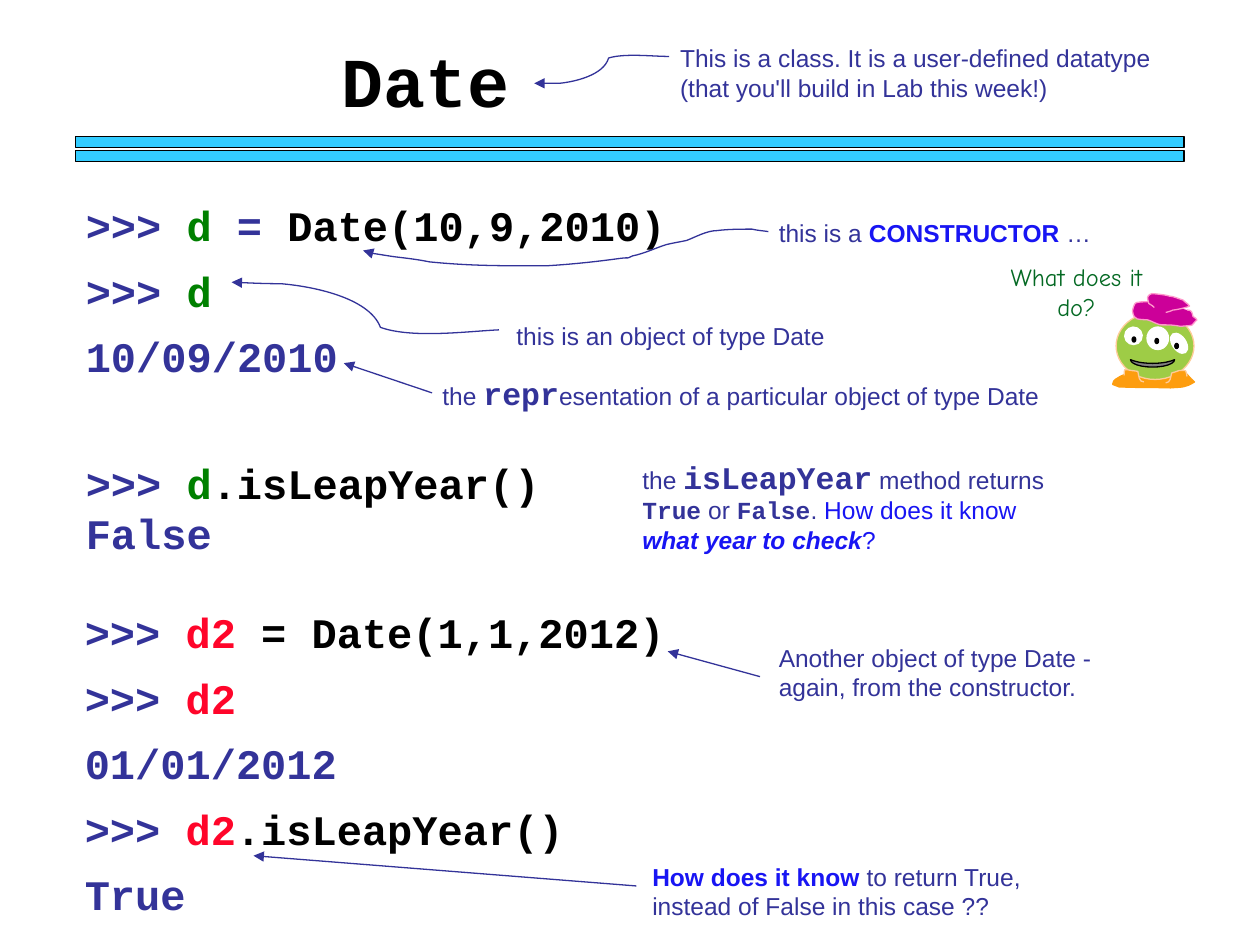
import pptx
import pptx.util
import pptx.dml.color
import pptx.enum.shapes
import pptx.enum.text
import pptx.oxml
import pptx.oxml.ns

Cm, Pt = pptx.util.Cm, pptx.util.Pt
Kind = pptx.enum.shapes.MSO_SHAPE
Align = pptx.enum.text.PP_ALIGN
qn = pptx.oxml.ns.qn

HEX = {"navy": "333399", "blue": "1815F3", "green": "008000", "red": "FF052A",
       "black": "000000", "white": "FFFFFF", "cyan": "33CCFF", "leaf": "046923",
       "lime": "9ECC46", "peach": "FFCC99", "orange": "FD9D0F", "plum": "CC0099",
       "pink": "FF99CC", "gray": "808080"}
HUE = {name: pptx.dml.color.RGBColor.from_string(code) for name, code in HEX.items()}

deck = pptx.Presentation()
deck.slide_width, deck.slide_height = Cm(25.4), Cm(19.05)
slide = deck.slides.add_slide(deck.slide_layouts[6])
shapes = slide.shapes


def write(box, lines, font="Arial", size=14, hue="navy", bold=False, align=Align.LEFT, gaps=()):
    """Add a text box; each line is a list of (text, marks), marks being words for a run."""
    area = shapes.add_textbox(*map(Cm, box))
    frame = area.text_frame
    frame.word_wrap = True
    frame.auto_size = pptx.enum.text.MSO_AUTO_SIZE.SHAPE_TO_FIT_TEXT
    for i, line in enumerate(lines):
        para = frame.paragraphs[0] if i == 0 else frame.add_paragraph()
        para.alignment = align
        if gaps:
            para.line_spacing = gaps[i]
        para.font.name, para.font.size, para.font.bold = font, Pt(size), bold
        para.font.color.rgb = HUE[hue]
        for text, marks in line:
            run = para.add_run()
            run.text = text
            for mark in marks.split():
                if mark in HUE:
                    run.font.color.rgb = HUE[mark]
                elif mark == "mono":
                    run.font.name, run.font.bold = "Courier New", True
                elif mark == "big":
                    run.font.size = Pt(18)
                else:
                    setattr(run.font, mark, True)


def trace(home, start, curves, closed=False):
    """Draw a chain of cubic curves, each given as two handles and an end point."""
    pen = home.build_freeform(Cm(start[0]), Cm(start[1]))
    pen.add_line_segments([(Cm(curve[i]), Cm(curve[i + 1])) for curve in curves for i in (0, 2, 4)],
                          close=closed)
    form = pen.convert_to_shape()
    legs = form._element.findall(".//" + qn("a:lnTo"))
    for first, *others in zip(legs[::3], legs[1::3], legs[2::3]):
        first.tag = qn("a:cubicBezTo")
        for leg in others:
            first.append(leg[0])
            leg.getparent().remove(leg)
    form.shadow.inherit = False
    form.line.width = Pt(0.75)
    return form


# Title and double rule
rule = shapes.add_group_shape().shapes
for top in (2.75, 3.04):
    bar = rule.add_shape(Kind.RECTANGLE, Cm(1.52), Cm(top), Cm(22.35), Cm(0.22))
    bar.shadow.inherit = False
    bar.fill.solid()
    bar.fill.fore_color.rgb = HUE["cyan"]
    bar.line.color.rgb, bar.line.width = HUE["black"], Pt(0.75)
write((2.13, 0.64, 12.9, 1.96), [[("Date", "")]], "Courier New", 40, "black", True, Align.CENTER)

# Interpreter sessions
ask = (">>> ", "")
sessions = [
    ((1.48, 3.6, 22.43, 4.22), (1.3, 1.3, 1.3), [
        [ask, ("d", "green"), (" = ", ""), ("Date(10,9,2010)", "black")],
        [ask, ("d", "green")],
        [("10/09/2010", "")]]),
    ((1.48, 9.1, 19.28, 2.31), (1.0, 1.0), [
        [ask, ("d", "green"), (".isLeapYear()", "black")],
        [("False", "")]]),
    ((1.46, 12.11, 19.28, 6.55), (1.0, 1.3, 1.3, 1.3, 1.3), [
        [ask, ("d2 ", "red"), ("= Date(1,1,2012)", "black")],
        [ask, ("d2", "red")],
        [("01/01/2012", "")],
        [ask, ("d2", "red"), (".isLeapYear()", "black")],
        [("True", "")]]),
]
for box, gaps, lines in sessions:
    write(box, lines, "Courier New", 24, bold=True, gaps=gaps)

# Remarks
remarks = [
    ((13.46, 0.75, 10.16, 1.45), [("This is a class. It is a user-defined datatype "
                                   "(that you'll build in Lab this week!)", "")]),
    ((15.45, 4.27, 7.16, 0.84), [("this is a ", ""), ("CONSTRUCTOR", "blue bold"), (" …", "")]),
    ((10.16, 6.35, 11.3, 0.84), [("this is an object of type Date", "")]),
    ((8.67, 7.42, 12.98, 1.02), [("the ", ""), ("repr", "mono big"),
                                 ("esentation of a particular object of type Date", "")]),
    ((12.7, 9.1, 8.69, 2.21), [("the ", ""), ("isLeapYear", "mono big"), (" method returns ", ""),
                               ("True", "mono"), (" or ", ""), ("False", "mono"), (". ", ""),
                               ("How does it know ", "blue"),
                               ("what year to check", "blue bold italic"), ("?", "blue")]),
    ((15.45, 12.83, 7.7, 1.45), [("Another object of type Date - again, from the constructor.", "")]),
    ((12.9, 17.25, 8.89, 1.45), [("How does it know", "blue bold"),
                                 (" to return True, instead of False in this case ??", "")]),
]
for box, runs in remarks:
    write(box, [runs])

# Arrows from remarks to code
arrows = []
bends = [
    ((13.49, 1.14), [(13.16, 1.14, 12.6, 1.07, 12.27, 1.17), (12.17, 1.52, 11.58, 1.65, 11.28, 1.68),
                     (11.1, 1.68, 10.77, 1.68, 10.77, 1.68)]),
    ((10.06, 6.65), [(9.42, 6.68, 8.31, 6.83, 7.67, 6.6), (7.44, 5.99, 6.27, 5.77, 5.66, 5.72),
                     (5.33, 5.72, 4.67, 5.69, 4.67, 5.69)]),
    ((15.49, 4.67), [(15.37, 4.65, 15.29, 4.65, 15.16, 4.62), (14.94, 4.62, 14.68, 4.62, 14.45, 4.65),
                     (14.25, 4.65, 14.02, 4.78, 13.84, 4.85), (13.69, 4.88, 13.56, 4.9, 13.44, 4.93),
                     (13.21, 5, 13, 5.11, 12.75, 5.16), (12.6, 5.23, 12.73, 5.18, 12.5, 5.21),
                     (11.99, 5.28, 11.51, 5.33, 11, 5.36), (10.06, 5.36, 9.47, 5.36, 8.66, 5.28),
                     (8.41, 5.23, 8.23, 5.21, 7.98, 5.18), (7.82, 5.16, 7.67, 5.13, 7.52, 5.11),
                     (7.44, 5.08, 7.39, 5.05, 7.32, 5.05)]),
]
for start, curves in bends:
    bend = trace(shapes, start, curves)
    bend.fill.background()
    arrows.append(bend)
for ends in ((8.71, 7.92, 6.93, 7.32), (15.32, 13.64, 13.46, 13.13), (12.83, 17.86, 5.11, 17.25)):
    link = shapes.add_connector(pptx.enum.shapes.MSO_CONNECTOR.STRAIGHT, *map(Cm, ends))
    link._element.spPr.append(pptx.oxml.parse_xml(
        f'<a:effectLst {pptx.oxml.ns.nsdecls("a")}/>'))
    arrows.append(link)
for arrow in arrows:
    arrow.line.color.rgb, arrow.line.width = HUE["navy"], Pt(0.75)
    arrow.line._get_or_add_ln().append(pptx.oxml.parse_xml(
        f'<a:tailEnd {pptx.oxml.ns.nsdecls("a")} type="triangle"/>'))

# Three-eyed alien: collar, head, hat, folds
alien = shapes.add_group_shape().shapes
collar = ((23.27, 7.37), [(23.5, 7.34, 23.65, 7.44, 23.85, 7.49), (23.93, 7.52, 23.98, 7.62, 24.08, 7.7),
                          (23.9, 7.82, 23.83, 7.8, 23.6, 7.82), (22.76, 7.8, 23.09, 7.82, 22.56, 7.8),
                          (22.5, 7.77, 22.48, 7.77, 22.43, 7.75), (22.43, 7.65, 22.55, 7.62, 22.58, 7.59),
                          (22.66, 7.57, 22.76, 7.47, 22.86, 7.44), (23, 7.37, 23.1, 7.35, 23.27, 7.37)])
brim = ((23.24, 6.07), [(23.14, 6.1, 23.04, 6.07, 22.91, 6.1), (22.86, 6.1, 22.83, 6.27, 22.83, 6.27),
                        (22.86, 6.48, 22.96, 6.43, 23.14, 6.45), (23.24, 6.48, 23.34, 6.55, 23.42, 6.55),
                        (23.55, 6.55, 23.67, 6.55, 23.8, 6.58), (24.13, 6.55, 23.98, 6.58, 24.13, 6.45),
                        (24.13, 6.43, 24.08, 6.4, 24.05, 6.38), (24.03, 6.3, 24.03, 6.25, 23.93, 6.25)])
crown = ((23.27, 6.2), [(23.24, 6.17, 23.22, 6.15, 23.16, 6.12), (23.14, 6.02, 23.09, 5.97, 23.22, 5.92),
                        (23.24, 5.92, 23.5, 5.94, 23.57, 5.97), (23.65, 5.97, 23.75, 6.02, 23.85, 6.05),
                        (23.88, 6.1, 23.93, 6.1, 23.98, 6.17), (23.93, 6.2, 23.7, 6.25, 23.65, 6.25),
                        (23.62, 6.25, 23.57, 6.3, 23.5, 6.3)])
left = ((22.66, 7.57), [(22.68, 7.42, 22.63, 7.44, 22.81, 7.47), (22.86, 7.47, 22.94, 7.49, 22.94, 7.49),
                        (22.96, 7.59, 22.96, 7.7, 23.06, 7.7)])
right = ((23.93, 7.59), [(23.9, 7.44, 23.93, 7.47, 23.77, 7.47), (23.72, 7.49, 23.62, 7.52, 23.62, 7.52),
                         (23.6, 7.59, 23.6, 7.72, 23.5, 7.72)])
head = [
    (Kind.OVAL, (22.5, 6.3, 1.57, 1.35), 0, "lime", "peach"),
    (Kind.OVAL, (22.66, 6.58, 0.38, 0.38), 327.2, "white", None),
    (Kind.OVAL, (23.11, 6.58, 0.46, 0.48), 0, "white", None),
    (Kind.OVAL, (23.62, 6.68, 0.3, 0.48), 325.5, "white", None),
    (Kind.OVAL, (22.81, 6.78, 0.1, 0.13), 0, "black", None),
    (Kind.OVAL, (23.27, 6.81, 0.1, 0.13), 0, "black", None),
    (Kind.OVAL, (23.67, 6.91, 0.1, 0.13), 0, "black", None),
    (Kind.MOON, (23.16, 6.88, 0.15, 0.89), 270, "gray", "black"),
]
parts = [(trace(alien, *collar, closed=True), "orange", "orange")]
for kind, box, turn, fill, edge in head:
    part = alien.add_shape(kind, *map(Cm, box))
    part.shadow.inherit = False
    part.rotation = turn
    parts.append((part, fill, edge))
for outline, fill, edge in ((brim, "plum", "pink"), (crown, "plum", "pink"),
                            (left, "orange", "peach"), (right, "orange", "peach")):
    parts.append((trace(alien, *outline), fill, edge))
for part, fill, edge in parts:
    part.fill.solid()
    part.fill.fore_color.rgb = HUE[fill]
    if edge:
        part.line.color.rgb, part.line.width = HUE[edge], Pt(0.75)
    else:
        part.line.fill.background()
write((20.05, 5.16, 3.3, 1.45), [[("What does it do?", "")]], "Comic Neue", hue="leaf", align=Align.CENTER)

deck.save("out.pptx")
